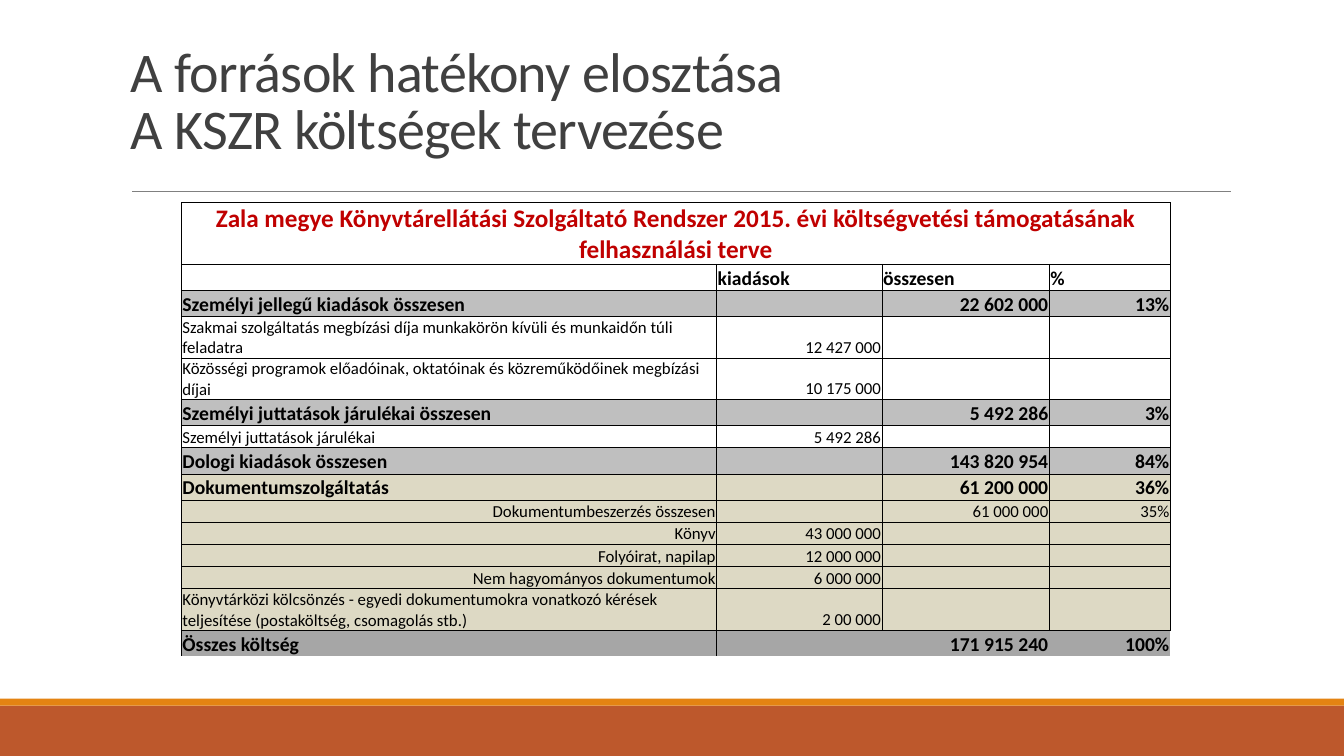
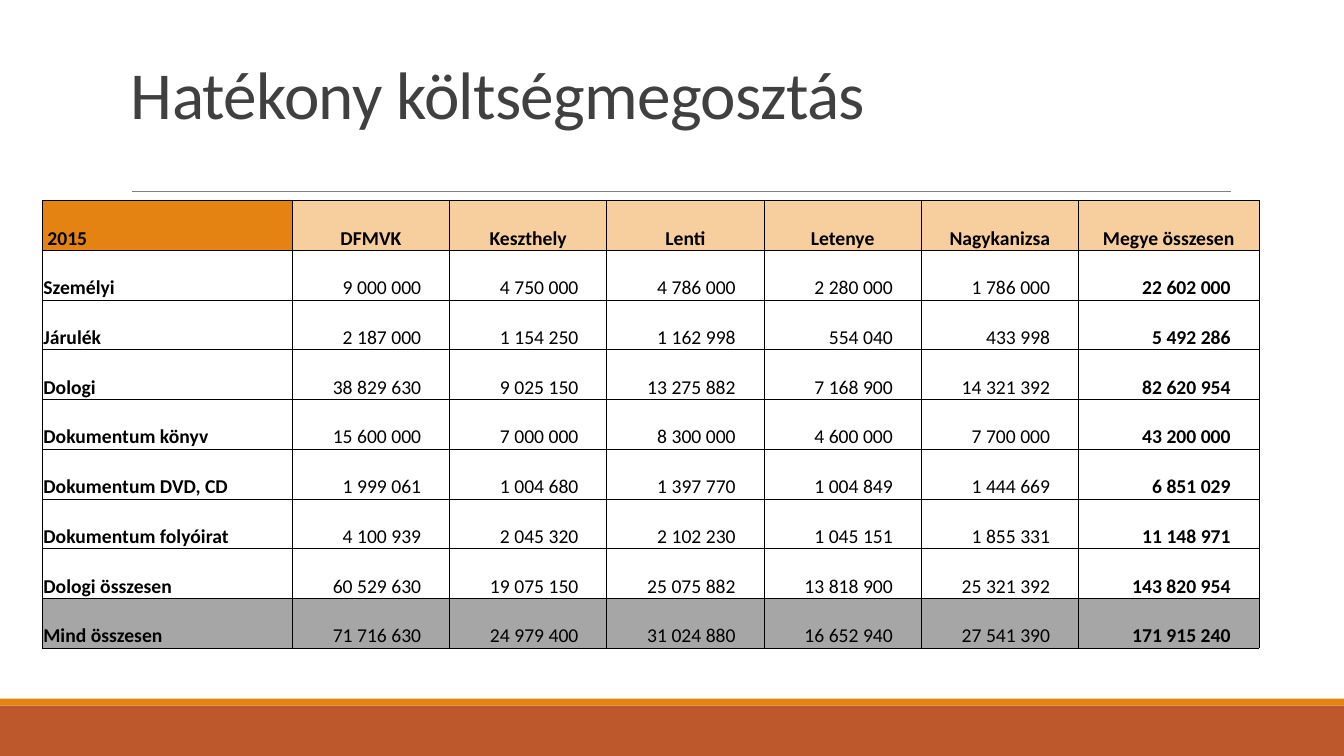
from dataclasses import dataclass, replace

from lxml.etree import SubElement
from pptx import Presentation
from pptx.dml.color import RGBColor
from pptx.enum.shapes import MSO_CONNECTOR, MSO_SHAPE
from pptx.enum.text import MSO_ANCHOR, PP_ALIGN as AL
from pptx.oxml.ns import qn
from pptx.util import Emu, Inches, Pt

FONT = "Calibri"
BLACK, TITLE, RED, RULE = "000000", "404040", "C00000", "808080"
RUST, ORANGE, PEACH = "BD582C", "E48312", "F7CE9D"
SILVER, SAND, GREY = "BFBFBF", "DDD9C4", "A6A6A6"
WIDTH, HEIGHT = Inches(13.33), Inches(7.5)
INSET = Inches(0.01)


@dataclass(frozen=True)
class Cell:
    text: str = ""
    size: int = 14
    bold: bool = False
    color: str = BLACK
    fill: str | None = None
    align: AL = AL.LEFT
    left: float = 0.01
    right: float = 0.01
    borders: str = "LRTB"


@dataclass(frozen=True)
class Row:
    height: float
    cells: list[Cell]


@dataclass(frozen=True)
class RowStyle:
    height: float
    size: int
    bold: bool
    fill: str | None = None
    label_align: AL = AL.LEFT
    value_align: AL = AL.RIGHT


@dataclass(frozen=True)
class Band:
    top: float
    height: float
    color: str


BANDS = [Band(93.33, 6.67, RUST), Band(92.4, 0.93, ORANGE)]

HEAD = RowStyle(3.47, 14, True, value_align=AL.LEFT)
GROUP = RowStyle(3.47, 14, True, SILVER)
LONG = RowStyle(5.47, 12, False)
ITEM = RowStyle(2.93, 12, False)
DOCS = replace(GROUP, fill=SAND)
DOC_ITEM = replace(ITEM, fill=SAND, label_align=AL.RIGHT)
DOC_LONG = replace(LONG, fill=SAND)
TOTAL = replace(GROUP, fill=GREY)

BUDGET_TITLE = (
    "Zala megye Könyvtárellátási Szolgáltató Rendszer 2015. évi költségvetési támogatásának\n"
    "felhasználási terve"
)
BUDGET = [
    (HEAD, "", "kiadások", "összesen", "%"),
    (GROUP, "Személyi jellegű kiadások összesen", "", "22 602 000", "13%"),
    (LONG, "Szakmai szolgáltatás megbízási díja munkakörön kívüli és munkaidőn túli feladatra",
     "12 427 000", "", ""),
    (LONG, "Közösségi programok előadóinak, oktatóinak és közreműködőinek megbízási díjai",
     "10 175 000", "", ""),
    (GROUP, "Személyi juttatások járulékai összesen", "", "5 492 286", "3%"),
    (ITEM, "Személyi juttatások járulékai", "5 492 286", "", ""),
    (GROUP, "Dologi kiadások összesen", "", "143 820 954", "84%"),
    (DOCS, "Dokumentumszolgáltatás", "", "61 200 000", "36%"),
    (DOC_ITEM, "Dokumentumbeszerzés összesen", "", "61 000 000", "35%"),
    (DOC_ITEM, "Könyv", "43 000 000", "", ""),
    (DOC_ITEM, "Folyóirat, napilap", "12 000 000", "", ""),
    (DOC_ITEM, "Nem hagyományos dokumentumok", "6 000 000", "", ""),
    (DOC_LONG, "Könyvtárközi kölcsönzés - egyedi dokumentumokra vonatkozó kérések "
     "teljesítése (postaköltség, csomagolás stb.)", "2 00 000", "", ""),
    (TOTAL, "Összes költség", "", "171 915 240", "100%"),
]
TOTAL_BORDERS = ["LTR", "LT", "T", "T"]

LIBRARIES = ["DFMVK", "Keszthely", "Lenti", "Letenye", "Nagykanizsa", "Megye összesen"]
SHARES = [
    ("Személyi", "9 000 000", "4 750 000", "4 786 000", "2 280 000", "1 786 000", "22 602 000"),
    ("Járulék", "2 187 000", "1 154 250", "1 162 998", "554 040", "433 998", "5 492 286"),
    ("Dologi", "38 829 630", "9 025 150", "13 275 882", "7 168 900", "14 321 392", "82 620 954"),
    ("Dokumentum könyv", "15 600 000", "7 000 000", "8 300 000", "4 600 000", "7 700 000",
     "43 200 000"),
    ("Dokumentum DVD, CD", "1 999 061", "1 004 680", "1 397 770", "1 004 849", "1 444 669",
     "6 851 029"),
    ("Dokumentum folyóirat", "4 100 939", "2 045 320", "2 102 230", "1 045 151", "1 855 331",
     "11 148 971"),
    ("Dologi összesen", "60 529 630", "19 075 150", "25 075 882", "13 818 900", "25 321 392",
     "143 820 954"),
    ("Mind összesen", "71 716 630", "24 979 400", "31 024 880", "16 652 940", "27 541 390",
     "171 915 240"),
]


def across(percent: float) -> Emu:
    return Emu(round(WIDTH * percent / 100))


def down(percent: float) -> Emu:
    return Emu(round(HEIGHT * percent / 100))


def rgb(color: str) -> RGBColor:
    return RGBColor.from_string(color)


def add_run(p, text: str, size: int, color: str, bold: bool = False):
    r = p.add_run()
    r.text = text
    r.font.name, r.font.size, r.font.bold = FONT, Pt(size), bold
    r.font.color.rgb = rgb(color)
    return r


def add_title(s, lines: list[str], size: int, height: float) -> None:
    tf = s.shapes.add_textbox(across(9), down(4.13), across(82.5), down(height)).text_frame
    tf.word_wrap = True
    tf.vertical_anchor = MSO_ANCHOR.BOTTOM
    p = tf.paragraphs[0]
    p.line_spacing = 0.85
    for i, line in enumerate(lines):
        if i:
            p.add_line_break()
        r = add_run(p, line, size, TITLE)
        r.font._element.set("spc", "-50")


def add_slide(prs, lines: list[str], size: int, title_height: float):
    s = prs.slides.add_slide(prs.slide_layouts[6])
    for band in BANDS:
        sp = s.shapes.add_shape(MSO_SHAPE.RECTANGLE, 0, down(band.top), WIDTH, down(band.height))
        sp.shadow.inherit = False
        sp.fill.solid()
        sp.fill.fore_color.rgb = rgb(band.color)
        sp.line.fill.background()
    rule = s.shapes.add_connector(
        MSO_CONNECTOR.STRAIGHT, across(9.83), down(25.33), across(91.6), down(25.33))
    rule.line.color.rgb = rgb(RULE)
    rule.line.width = Pt(0.5)
    SubElement(rule._element.spPr, qn("a:effectLst"))
    add_title(s, lines, size, title_height)
    return s


def draw_borders(tc, sides: str) -> None:
    tc_pr = tc.get_or_add_tcPr()
    for side in "LRTB":
        ln = SubElement(tc_pr, qn(f"a:ln{side}"), w=str(Pt(0.5)))
        if side in sides:
            fill = SubElement(ln, qn("a:solidFill"))
            SubElement(fill, qn("a:srgbClr"), val=BLACK)
        else:
            SubElement(ln, qn("a:noFill"))


def draw_cell(cell, spec: Cell) -> None:
    draw_borders(cell._tc, spec.borders)
    if spec.fill:
        cell.fill.solid()
        cell.fill.fore_color.rgb = rgb(spec.fill)
    else:
        cell.fill.background()
    cell.margin_left, cell.margin_right = Inches(spec.left), Inches(spec.right)
    cell.margin_top, cell.margin_bottom = INSET, 0
    cell.vertical_anchor = MSO_ANCHOR.BOTTOM
    tf = cell.text_frame
    for i, line in enumerate(spec.text.split("\n")):
        p = tf.add_paragraph() if i else tf.paragraphs[0]
        p.alignment = spec.align
        if line:
            add_run(p, line, spec.size, spec.color, spec.bold)
        else:
            SubElement(p._p, qn("a:endParaRPr"), sz=str(spec.size * 100))


def add_grid(s, left: float, top: float, cols: list[float], rows: list[Row]) -> None:
    table = s.shapes.add_table(
        len(rows), len(cols), across(left), down(top),
        across(sum(cols)), down(sum(row.height for row in rows))).table
    table.first_row = table.horz_banding = False
    for column, width in zip(table.columns, cols):
        column.width = across(width)
    for y, row in enumerate(rows):
        table.rows[y].height = down(row.height)
        missing = len(cols) - len(row.cells)
        for x, spec in enumerate(row.cells + [Cell()] * missing):
            draw_cell(table.cell(y, x), spec)
        if missing:
            table.cell(y, len(row.cells) - 1).merge(table.cell(y, len(cols) - 1))


def budget_row(style: RowStyle, *texts: str) -> Row:
    borders = TOTAL_BORDERS if style is TOTAL else ["LRTB"] * len(texts)
    return Row(style.height, [
        Cell(text, style.size, style.bold, fill=style.fill, borders=sides,
             align=style.value_align if x else style.label_align)
        for x, (text, sides) in enumerate(zip(texts, borders))])


def share_row(label: str, *values: str, fill: str | None) -> Row:
    number = Cell(fill=fill, align=AL.RIGHT, right=0.28)
    cells = [replace(number, text=v, bold=x == len(values)) for x, v in enumerate(values, 1)]
    return Row(6.58, [Cell(label, bold=True, fill=fill)] + cells)


def budget_slide(prs) -> None:
    s = add_slide(prs, ["A források hatékony elosztása", "A KSZR költségek tervezése"], 40, 17.87)
    heading = Cell(BUDGET_TITLE, 18, True, RED, align=AL.CENTER)
    rows = [Row(7.2, [heading])] + [budget_row(*entry) for entry in BUDGET]
    add_grid(s, 13.5, 26.8, [39.83, 12.3, 12.45, 9], rows)


def shares_slide(prs) -> None:
    s = add_slide(prs, ["Hatékony költségmegosztás"], 48, 14.13)
    year = Cell("2015", bold=True, fill=ORANGE, left=0.05)
    names = [Cell(name, bold=True, fill=PEACH, align=AL.CENTER) for name in LIBRARIES]
    rows = [Row(6.58, [year] + names)]
    rows += [share_row(*entry, fill=GREY if entry is SHARES[-1] else None) for entry in SHARES]
    add_grid(s, 3.15, 26.53, [18.6] + [11.7] * 5 + [13.43], rows)


def main() -> None:
    prs = Presentation()
    prs.slide_width, prs.slide_height = WIDTH, HEIGHT
    budget_slide(prs)
    shares_slide(prs)
    prs.save("out.pptx")


if __name__ == "__main__":
    main()
